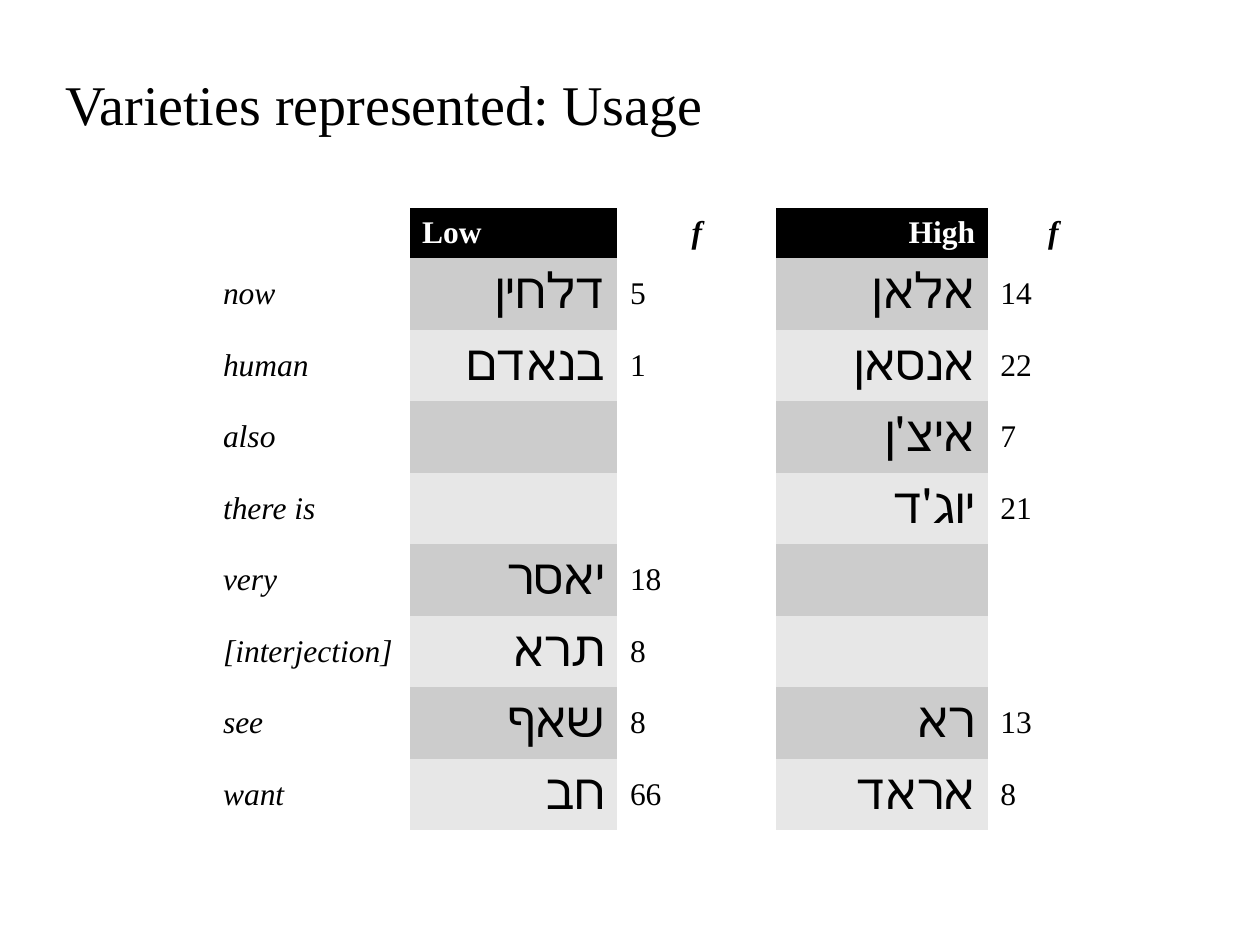
"""Build a slide with a table of low and high variety usage."""
from pptx import Presentation
from pptx import util as u
from pptx.dml.color import RGBColor
from pptx.enum import text
from pptx.oxml.ns import qn

TITLE = "Varieties represented: Usage"
HEADER = ("", "Low", "f", "High", "f")
ROWS = [
    ("now", "דלחין", "5", "אלאן", "14"),
    ("human", "בנאדם", "1", "אנסאן", "22"),
    ("also", "", "", "איצ'ן", "7"),
    ("there is", "", "", "יוג'ד", "21"),
    ("very", "יאסר", "18", "", ""),
    ("[interjection]", "תרא", "8", "", ""),
    ("see", "שאף", "8", "רא", "13"),
    ("want", "חב", "66", "אראד", "8"),
]
CALIBRI_ROWS = ("now", "human", "there is")
WORD_COLUMNS = (1, 3)
COLORS = {"ink": "000000", "paper": "FFFFFF", "dark": "CCCCCC", "light": "E7E7E7"}
SERIF, SANS = "Times New Roman", "Calibri"
COLUMN_WIDTHS = (1.58, 1.65, 1.26, 1.68, 1.04)
HEADER_HEIGHT, ROW_HEIGHT = 0.4, 0.56
NO_STYLE = "{2D5ABB26-0587-4C30-8999-92F81FD0307C}"
ALIGN = text.PP_ALIGN


def write(frame, words, size, color="ink", name=SERIF, align=ALIGN.LEFT, bold=False, italic=False):
    para = frame.paragraphs[0]
    para.text, para.alignment = words, align
    font = para.font
    font.size, font.name, font.bold, font.italic = u.Pt(size), name, bold, italic
    font.color.rgb = RGBColor.from_string(COLORS[color])


def fill_cell(cell, color):
    if color:
        cell.fill.solid()
        cell.fill.fore_color.rgb = RGBColor.from_string(COLORS[color])
    else:
        cell.fill.background()
    cell.vertical_anchor = text.MSO_ANCHOR.MIDDLE


def add_title(page):
    box = page.shapes.add_textbox(u.Inches(0.42), u.Inches(0.5), u.Inches(8.27), u.Inches(0.64))
    box.text_frame.word_wrap = True
    write(box.text_frame, TITLE, 32)


def add_usage_table(page):
    height = HEADER_HEIGHT + ROW_HEIGHT * len(ROWS)
    table = page.shapes.add_table(
        len(ROWS) + 1, len(HEADER), u.Inches(1.67), u.Inches(1.65),
        u.Inches(sum(COLUMN_WIDTHS)), u.Inches(height)).table
    table.first_row = table.horz_banding = False
    table._tbl.tblPr.find(qn("a:tableStyleId")).text = NO_STYLE
    for column, width in zip(table.columns, COLUMN_WIDTHS):
        column.width = u.Inches(width)
    for index, row in enumerate(table.rows):
        row.height = u.Inches(ROW_HEIGHT if index else HEADER_HEIGHT)

    header_aligns = (ALIGN.LEFT, ALIGN.LEFT, ALIGN.CENTER, ALIGN.RIGHT, ALIGN.CENTER)
    for col, (words, align) in enumerate(zip(HEADER, header_aligns)):
        cell, is_word = table.cell(0, col), col in WORD_COLUMNS
        fill_cell(cell, "ink" if is_word else None)
        write(cell.text_frame, words, 18, "paper" if is_word else "ink",
              align=align, bold=True, italic=not is_word)

    for index, values in enumerate(ROWS, start=1):
        band = "dark" if index % 2 else "light"
        word_font = SANS if values[0] in CALIBRI_ROWS else SERIF
        for col, words in enumerate(values):
            cell = table.cell(index, col)
            if col in WORD_COLUMNS:
                fill_cell(cell, band)
                write(cell.text_frame, words, 28 if words else 18, name=word_font, align=ALIGN.RIGHT)
            else:
                fill_cell(cell, None)
                write(cell.text_frame, words, 18, italic=col == 0)


def main():
    deck = Presentation()
    deck.slide_width, deck.slide_height = u.Inches(10), u.Inches(7.5)
    page = deck.slides.add_slide(deck.slide_layouts[6])
    add_title(page)
    add_usage_table(page)
    deck.save("out.pptx")


if __name__ == "__main__":
    main()
